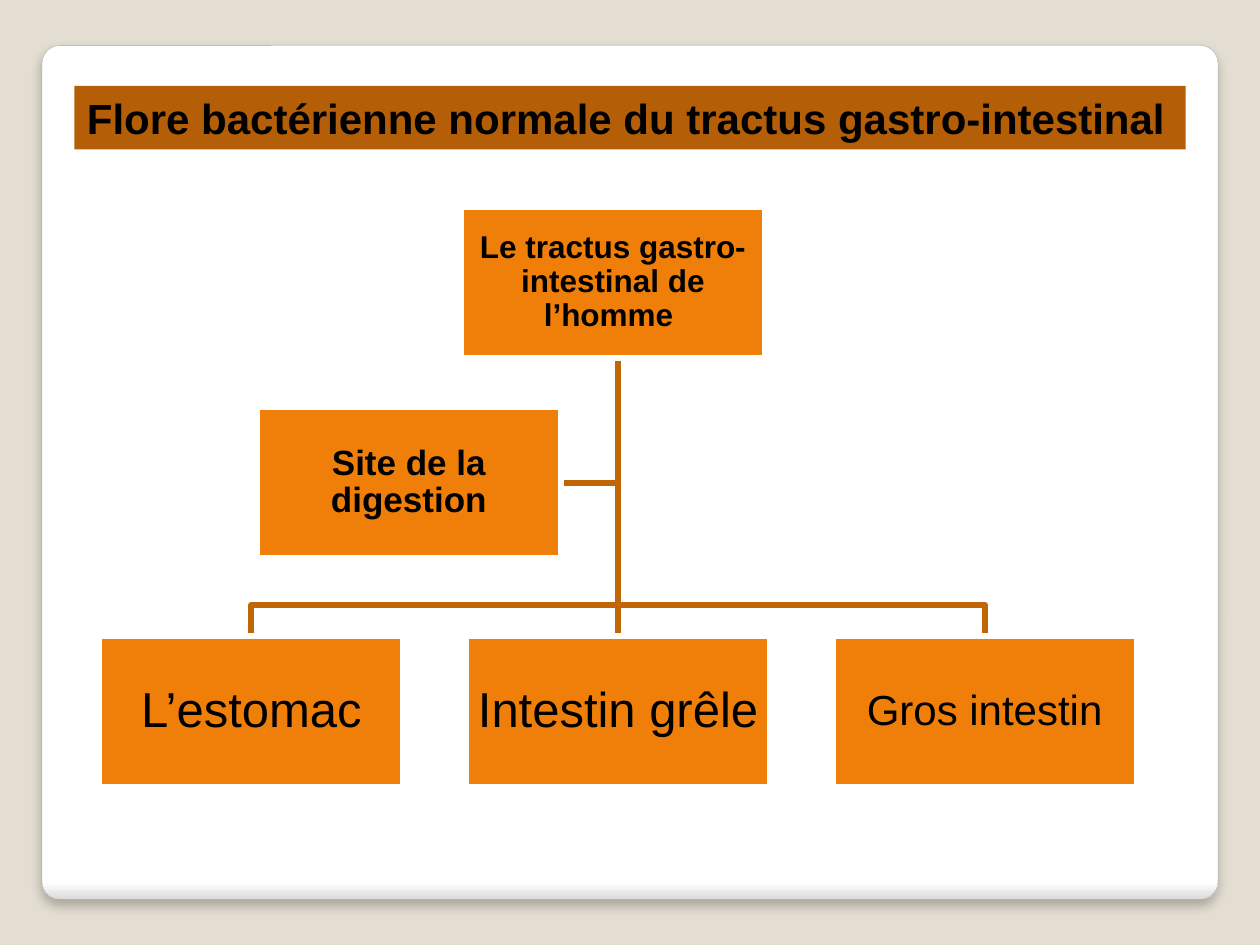
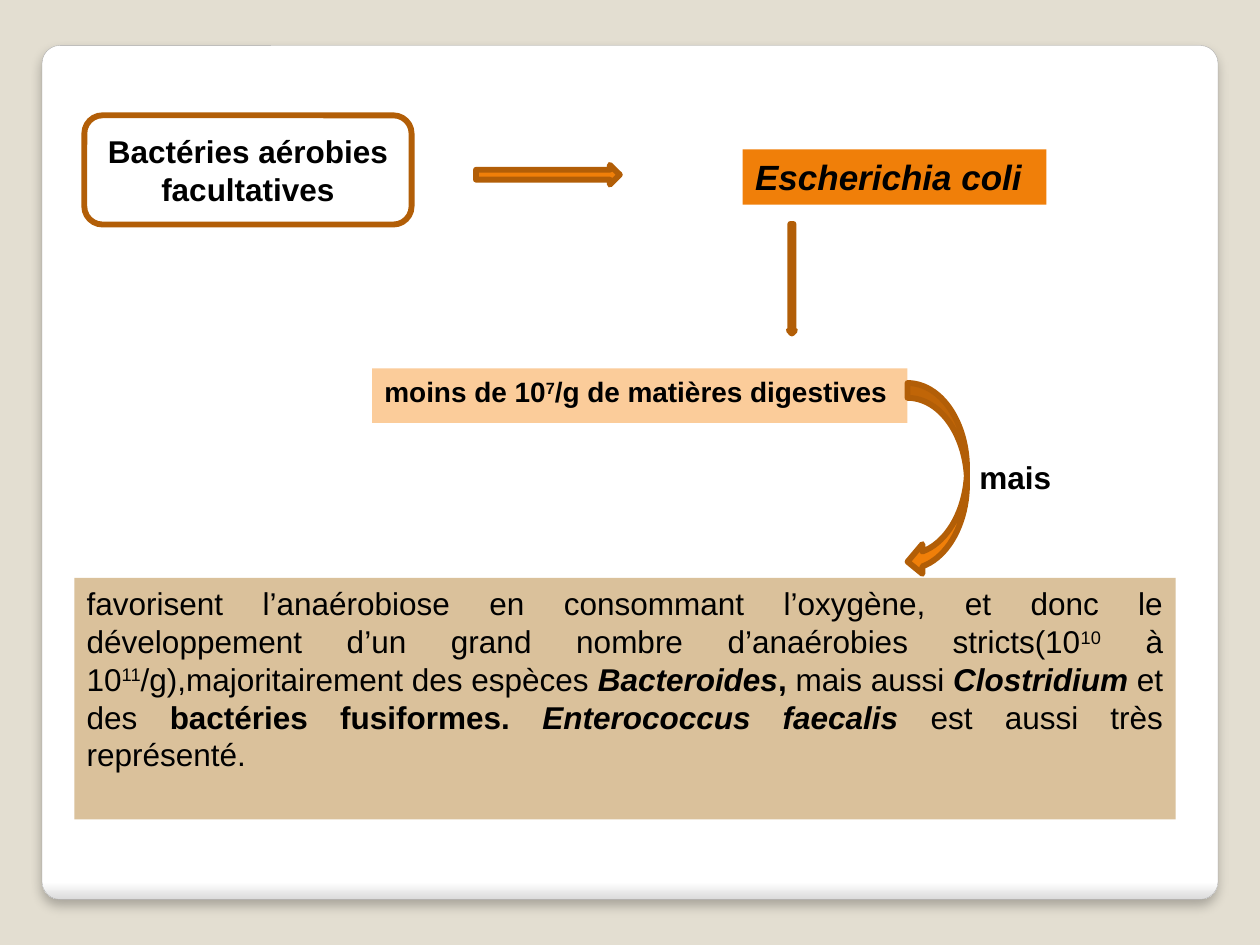
from dataclasses import dataclass

from lxml.etree import SubElement
from pptx import Presentation
from pptx.dml.color import RGBColor
from pptx.enum.shapes import MSO_CONNECTOR, MSO_SHAPE
from pptx.enum.text import MSO_ANCHOR, MSO_AUTO_SIZE, PP_ALIGN
from pptx.oxml.ns import qn
from pptx.util import Pt


@dataclass(frozen=True)
class Theme:
    font: str = "Arial"
    text: str = "000000"
    background: str = "E3DED1"
    white: str = "FFFFFF"
    card_edge: str = "DADADA"
    card_line: str = "A4A4A4"
    title_band: str = "B45F07"
    orange: str = "F07F09"
    peach: str = "FBCC9A"
    sand: str = "DAC19B"
    branch: str = "C06607"
    outline: str = "B25E07"
    line_width: float = 3.35
    title_size: int = 24
    large_size: int = 28
    label_size: int = 20
    body_size: int = 18
    small_size: int = 16


def color(value):
    return RGBColor.from_string(value)


class Deck:
    def __init__(self, theme):
        self.theme = theme
        self.slide = None
        self.presentation = Presentation()
        self.presentation.slide_width = Pt(720)
        self.presentation.slide_height = Pt(540)
        fill = self.presentation.slide_master.background.fill
        fill.solid()
        fill.fore_color.rgb = color(theme.background)

    def add_slide(self, title=None):
        layout = self.presentation.slide_layouts[5 if title else 6]
        self.slide = self.presentation.slides.add_slide(layout)
        if len(self.presentation.slides) == 1:
            self.add_master_card()
        if title:
            self.set_title(title)

    def add_master_card(self):
        """Draw the white card and move it to the master, behind every slide."""
        card = self.shape(MSO_SHAPE.ROUNDED_RECTANGLE, (24, 26, 672, 488),
                          line=self.theme.card_line, width=0.16)
        card.adjustments[0] = 0.021
        card.fill.gradient()
        card.fill.gradient_angle = 270
        stops = card.fill.gradient_stops
        for stop, position, value in zip(stops, (0.98, 1),
                                         (self.theme.white, self.theme.card_edge)):
            stop.position = position
            stop.color.rgb = color(value)
        effects = card.element.spPr.find(qn("a:effectLst"))
        shadow = SubElement(effects, qn("a:outerShdw"), blurRad=str(Pt(6)),
                            dist=str(Pt(4)), dir="5400000", rotWithShape="0")
        black = SubElement(shadow, qn("a:srgbClr"), val="000000")
        SubElement(black, qn("a:alpha"), val="25000")
        self.presentation.slide_master.shapes.element.insert(2, card.element)

    def set_title(self, title):
        placeholder = self.slide.shapes.title
        placeholder.left, placeholder.top = Pt(42.5), Pt(49)
        placeholder.width, placeholder.height = Pt(635), Pt(36.3)
        placeholder.fill.solid()
        placeholder.fill.fore_color.rgb = color(self.theme.title_band)
        self.set_text(placeholder, title, self.theme.title_size, bold=True)

    def shape(self, kind, box, fill=None, line=None, width=None):
        shape = self.slide.shapes.add_shape(kind, *map(Pt, box))
        shape.shadow.inherit = False
        if fill:
            shape.fill.solid()
            shape.fill.fore_color.rgb = color(fill)
        if line:
            self.stroke(shape, line, width)
        else:
            shape.line.fill.background()
        return shape

    def stroke(self, shape, value, width=None):
        shape.line.color.rgb = color(value)
        shape.line.width = Pt(width or self.theme.line_width)

    def arrow(self, kind, box):
        self.shape(kind, box, self.theme.orange, self.theme.outline)

    def label(self, box, text, size, **style):
        text_box = self.slide.shapes.add_textbox(*map(Pt, box))
        self.set_text(text_box, text, size, **style)

    def panel(self, box, fill, text, size, **style):
        self.set_text(self.shape(MSO_SHAPE.RECTANGLE, box, fill), text, size, **style)

    def node(self, box, text, size, bold=False):
        node = self.shape(MSO_SHAPE.RECTANGLE, box, self.theme.orange, self.theme.white)
        self.set_text(node, text, size, bold=bold, align=PP_ALIGN.CENTER,
                      anchor=MSO_ANCHOR.MIDDLE, margin=1, spacing=0.9)

    def branch(self, *points):
        """Join points with a straight connector or an open bent line."""
        points = [(Pt(x), Pt(y)) for x, y in points]
        if len(points) == 2:
            line = self.slide.shapes.add_connector(
                MSO_CONNECTOR.STRAIGHT, *points[0], *points[1])
            SubElement(line.element.spPr, qn("a:effectLst"))
        else:
            builder = self.slide.shapes.build_freeform(*points[0])
            builder.add_line_segments(points[1:], close=False)
            line = builder.convert_to_shape()
            line.shadow.inherit = False
            line.fill.background()
        self.stroke(line, self.theme.branch)

    def set_text(self, shape, text, size, bold=None, italic=None, align=PP_ALIGN.LEFT,
                 anchor=MSO_ANCHOR.TOP, margin=None, spacing=None):
        """Fill a shape with a string or (text, marks) runs; marks: b, i, ^ (superscript)."""
        frame = shape.text_frame
        frame.word_wrap = True
        frame.auto_size = MSO_AUTO_SIZE.NONE
        frame.vertical_anchor = anchor
        if margin is not None:
            frame.margin_left = frame.margin_right = Pt(margin)
            frame.margin_top = frame.margin_bottom = Pt(margin)
        paragraph = frame.paragraphs[0]
        paragraph.alignment = align
        paragraph.line_spacing = spacing
        font = paragraph.font
        font.name, font.size = self.theme.font, Pt(size)
        font.bold, font.italic = bold, italic
        font.color.rgb = color(self.theme.text)
        for content, marks in [(text, "")] if isinstance(text, str) else text:
            run = paragraph.add_run()
            run.text = content
            if "b" in marks:
                run.font.bold = True
            if "i" in marks:
                run.font.italic = True
            if "^" in marks:
                run.font._element.set("baseline", "30000")


def add_tract_slide(deck):
    theme = deck.theme
    deck.add_slide("Flore bactérienne normale du tractus gastro-intestinal")
    node_width, node_height = 173.5, 86.4
    organ_left, organ_top, organ_step = 56.9, 363.6, 209.5
    root_bottom, bend_top = 204.5, 345.6
    site_left, site_top = 146.9, 232.6
    organs = [("L’estomac", theme.large_size), ("Intestin grêle", theme.large_size),
              ("Gros intestin", theme.title_size)]
    lefts = [organ_left + organ_step * index for index in range(len(organs))]
    centers = [left + node_width / 2 for left in lefts]
    stem = centers[1]
    site_middle = site_top + node_height / 2

    deck.branch((stem, root_bottom), (stem, site_middle),
                (site_left + node_width, site_middle))
    for center in centers:
        bend = [] if center == stem else [(stem, bend_top), (center, bend_top)]
        deck.branch((stem, root_bottom), *bend, (center, organ_top))
    for left, (organ, size) in zip(lefts, organs):
        deck.node((left, organ_top, node_width, node_height), organ, size)
    deck.node((site_left, site_top, node_width, node_height),
              "Site de la digestion", theme.label_size, bold=True)
    deck.node((263.5, root_bottom - node_height, node_width, node_height),
              "Le tractus gastro-intestinal de l’homme ", theme.body_size, bold=True)


def add_bacteria_slide(deck):
    theme = deck.theme
    deck.add_slide()
    deck.panel((42.5, 330.3, 629.3, 138), theme.sand, [
        ("favorisent l’anaérobiose en consommant l’oxygène, et donc le développement "
         "d’un grand nombre d’anaérobies stricts(10", ""),
        ("10", "^"), (" à 10", ""), ("11", "^"),
        ("/g),majoritairement des espèces ", ""),
        ("Bacteroides", "bi"), (", ", "b"), ("mais aussi ", ""),
        ("Clostridium ", "bi"), ("et des ", ""), ("bactéries fusiformes. ", "b"),
        ("Enterococcus faecalis", "bi"), (" est aussi très représenté.", ""),
    ], theme.body_size, align=PP_ALIGN.JUSTIFY)
    aerobes = deck.shape(MSO_SHAPE.ROUNDED_RECTANGLE, (48.2, 65.9, 187, 62.4),
                         theme.white, theme.outline)
    deck.set_text(aerobes, "Bactéries aérobies facultatives", theme.body_size, bold=True,
                  align=PP_ALIGN.CENTER, anchor=MSO_ANCHOR.MIDDLE)
    deck.arrow(MSO_SHAPE.RIGHT_ARROW, (272, 94.2, 82.2, 11.3))
    deck.panel((424.4, 85.4, 173.6, 31.5), theme.orange, "Escherichia coli",
               theme.label_size, bold=True, italic=True)
    deck.panel((212.6, 210.5, 306, 31.2), theme.peach,
               [("moins de 10", ""), ("7", "^"), ("/g de matières digestives", "")],
               theme.small_size, bold=True)
    deck.arrow(MSO_SHAPE.CURVED_LEFT_ARROW, (518.6, 218.9, 34, 110.6))
    deck.label((552.6, 258, 61.2, 29), "mais", theme.body_size, bold=True)
    deck.arrow(MSO_SHAPE.DOWN_ARROW, (450.7, 128, 3.6, 62.6))


def main():
    deck = Deck(Theme())
    add_tract_slide(deck)
    add_bacteria_slide(deck)
    deck.presentation.save("out.pptx")


if __name__ == "__main__":
    main()
